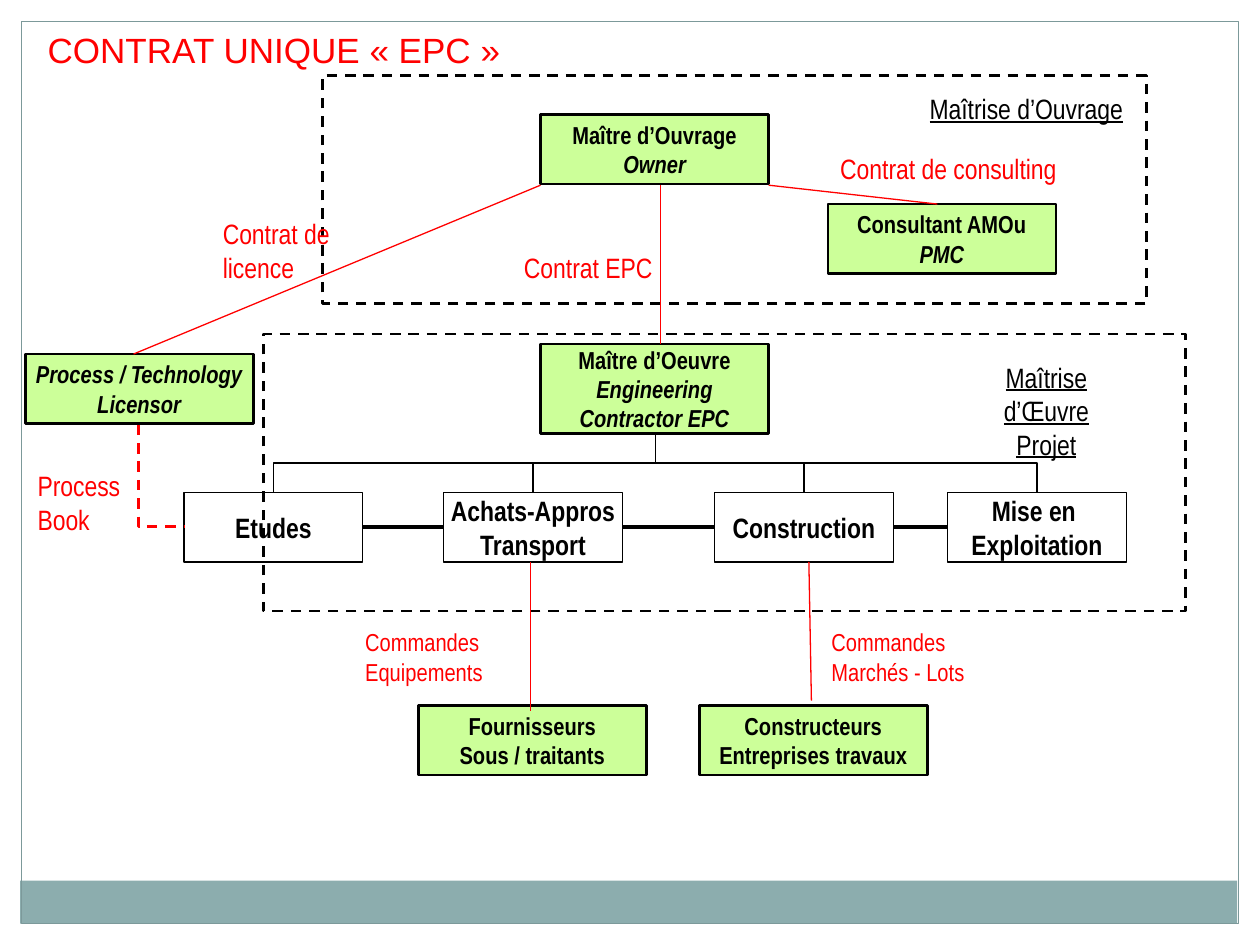
from lxml import etree
from pptx import Presentation
from pptx.dml.color import RGBColor as RGB
from pptx.enum.dml import MSO_LINE as Dash
from pptx.enum.shapes import MSO_CONNECTOR as Conn, MSO_SHAPE as Form
from pptx.enum.text import MSO_ANCHOR as Anchor, PP_ALIGN as Align
from pptx.oxml.ns import qn
from pptx.util import Inches, Pt


class Theme:
    black = RGB.from_string("000000")
    red = RGB.from_string("FF0000")
    lime = RGB.from_string("CCFF99")
    teal = RGB.from_string("8CADAE")
    edge = RGB.from_string("7C999A")
    narrow, sans = "Arial Narrow", "Arial"
    small, mid, big = Pt(14), Pt(16), Pt(20)
    thin, bold, thick = Pt(0.75), Pt(1.5), Pt(2.25)


def add_box(place, lines=(), fill=None, line=None, width=Theme.thin, dash=None,
            slant=9, align=Align.CENTER, **font):
    """Rectangle, or a text box if it has no fill and line; lines from index slant on are italic."""
    area = [Inches(v) for v in place]
    if fill is None and line is None:
        box = slide.shapes.add_textbox(*area)
    else:
        box = slide.shapes.add_shape(Form.RECTANGLE, *area)
        box.shadow.inherit = False
        box.text_frame.vertical_anchor = Anchor.MIDDLE
        for part, color in ((box.fill, fill), (box.line.fill, line)):
            if color is None:
                part.background()
            else:
                part.solid()
                part.fore_color.rgb = color
        if line is not None:
            box.line.width = width
            box.line.dash_style = dash
    frame = box.text_frame
    frame.word_wrap = False
    look = {"name": Theme.narrow, "size": Theme.mid, **font}
    tint = look.pop("color", Theme.black)
    for i, text in enumerate(lines):
        para = frame.paragraphs[0] if i == 0 else frame.add_paragraph()
        para.alignment = align
        run = para.add_run()
        run.text = text
        for key, value in look.items():
            setattr(run.font, key, value)
        run.font.italic = i >= slant
        run.font.color.rgb = tint


def add_link(x1, y1, x2, y2, color=Theme.black, width=Theme.thin, dash=None, bend=None):
    """Straight line, or a bent one of the given preset that leaves downwards."""
    ends = (x1, y1, x2, y2)
    if bend:
        # A downward bend is a sideways one turned a quarter about its centre.
        side = 1 if x2 < x1 else -1
        mx, my = (x1 + x2) / 2, (y1 + y2) / 2
        dx, dy = abs(x2 - x1) / 2, side * (y2 - y1) / 2
        ends = (mx - dy, my - dx, mx + dy, my + dx)
    link = slide.shapes.add_connector(Conn.ELBOW if bend else Conn.STRAIGHT,
                                      *[Inches(v) for v in ends])
    props = link._element.spPr
    if bend:
        props.find(qn("a:xfrm")).set("rot", str((90 if side > 0 else 270) * 60000))
        props.find(qn("a:prstGeom")).set("prst", bend)
    link.line.color.rgb = color
    link.line.width = width
    link.line.dash_style = dash
    etree.SubElement(props, qn("a:effectLst"))


deck = Presentation()
deck.slide_width, deck.slide_height = Inches(10), Inches(7.5)
slide = deck.slides.add_slide(deck.slide_layouts[6])

# Frame of the page
add_box((0.16, 6.99, 9.66, 0.34), fill=Theme.teal)
add_box((0.17, 0.17, 9.66, 7.16), line=Theme.edge)

# Dashed zones
for zone in ((2.09, 2.65, 7.32, 2.2), (2.56, 0.6, 6.54, 1.81)):
    add_box(zone, line=Theme.black, width=Theme.bold, dash=Dash.DASH)

# Parties to the contracts
parties = [
    (4.29, 0.91, 0.55, 1, ["Maître d’Ouvrage", "Owner"]),
    (4.29, 2.73, 0.71, 1, ["Maître d’Oeuvre", "Engineering", "Contractor EPC"]),
    (6.57, 1.62, 0.55, 1, ["Consultant AMOu", "PMC"]),
    (0.2, 2.81, 0.55, 0, ["Process / Technology", "Licensor"]),
    (5.55, 5.6, 0.55, 9, ["Constructeurs", "Entreprises travaux"]),
    (3.32, 5.6, 0.55, 9, ["Fournisseurs", "Sous / traitants"]),
]
for x, y, high, slant, lines in parties:
    add_box((x, y, 1.81, high), lines, fill=Theme.lime, line=Theme.black,
            width=Theme.bold, slant=slant, size=Theme.small, bold=True)

# Phases of the project, chained and hung below the main contractor
phases = [
    (1.46, ["Etudes"]),
    (3.52, ["Achats-Appros", "Transport"]),
    (5.67, ["Construction"]),
    (7.52, ["Mise en ", "Exploitation"]),
]
wide, mid = 1.42, 4.18
for x, lines in phases:
    add_box((x, 3.91, wide, 0.55), lines, line=Theme.black, bold=True)
    add_link(5.2, 3.44, x + wide / 2, 3.91, bend="bentConnector3")
for (x, _), (after, _) in zip(phases, phases[1:]):
    add_link(x + wide, mid, after, mid, width=Theme.thick)

# Contract links
for ends in ((4.29, 1.47, 1.06, 2.81), (6.1, 1.47, 7.44, 1.62), (5.24, 1.47, 5.24, 2.73),
             (4.21, 4.46, 4.21, 5.64), (6.42, 4.46, 6.44, 5.56)):
    add_link(*ends, color=Theme.red)
add_link(1.1, 3.37, 1.46, mid, color=Theme.red, width=Theme.bold, dash=Dash.DASH,
         bend="bentConnector2")

# Zone names
add_box((7.28, 0.68, 1.74, 0.37), ["Maîtrise d’Ouvrage"], align=Align.LEFT, underline=True)
add_box((7.52, 2.81, 1.57, 0.64), ["Maîtrise d’Œuvre", "Projet"], underline=True)

# Red labels and title
labels = [
    ((1.67, 1.67, 1.66, 0.37), ["Contrat de licence"], Theme.mid),
    ((6.57, 1.15, 1.92, 0.37), ["Contrat de consulting"], Theme.mid),
    ((4.06, 1.94, 1.22, 0.37), ["Contrat EPC"], Theme.mid),
    ((0.2, 3.67, 0.86, 0.64), ["Process", "Book"], Theme.mid),
    ((2.8, 4.93, 1.13, 0.57), ["Commandes", "Equipements"], Theme.small),
    ((6.5, 4.93, 1.26, 0.57), ["Commandes", "Marchés - Lots"], Theme.small),
]
for place, lines, size in labels:
    add_box(place, lines, align=Align.LEFT, size=size, color=Theme.red)
add_box((0.28, 0.18, 3.83, 0.44), ["CONTRAT UNIQUE « EPC »"], align=Align.LEFT,
        name=Theme.sans, size=Theme.big, color=Theme.red)

deck.save("out.pptx")
